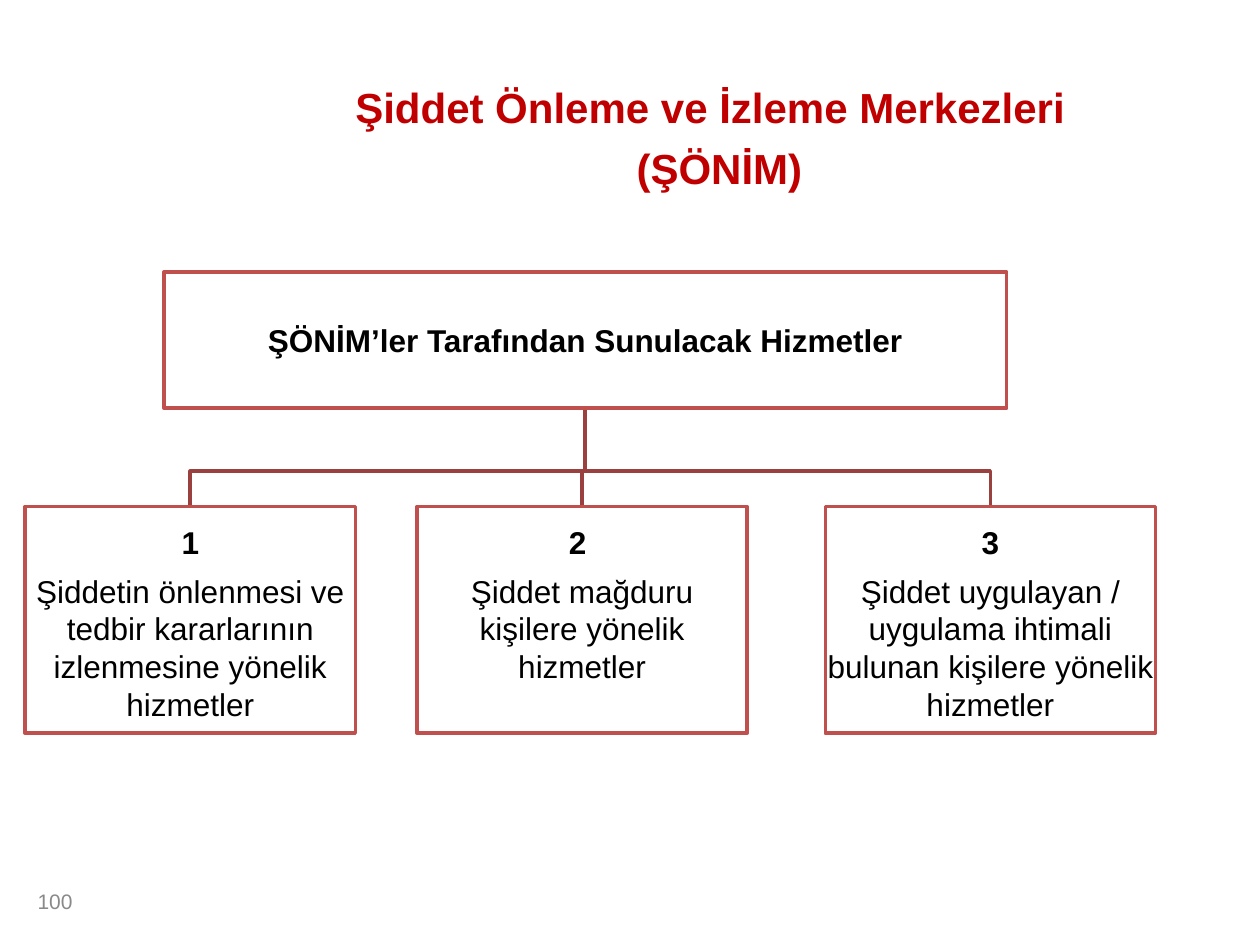
from pptx import Presentation
from pptx.dml.color import RGBColor
from pptx.enum.shapes import MSO_SHAPE
from pptx.enum.text import MSO_ANCHOR, MSO_AUTO_SIZE, PP_ALIGN
from pptx.util import Inches, Pt

BORDER, CONNECTOR = "C0504D", "9A403E"
TITLE_COLOR, TEXT_COLOR, NUMBER_COLOR = "C00000", "000000", "898989"

ROOT_LEFT, ROOT_TOP, ROOT_WIDTH, ROOT_HEIGHT = 1.3, 2.16, 6.69, 1.08
SERVICE_TOP, SERVICE_WIDTH, SERVICE_HEIGHT = 4.02, 2.62, 1.8
BRANCH_Y = 3.74

SERVICES = [
    (0.2, "1", "Şiddetin önlenmesi ve tedbir kararlarının izlenmesine yönelik hizmetler"),
    (3.31, "2 ", "Şiddet mağduru kişilere yönelik hizmetler"),
    (6.55, "3", "Şiddet uygulayan / uygulama ihtimali bulunan kişilere yönelik hizmetler"),
]


def color(hex_value):
    return RGBColor.from_string(hex_value)


def format_paragraph(paragraph, size, hex_value, bold=False, alignment=PP_ALIGN.CENTER):
    paragraph.alignment = alignment
    for run in paragraph.runs:
        run.font.name = "Arial"
        run.font.size = Pt(size)
        run.font.bold = bold
        run.font.color.rgb = color(hex_value)


def set_line(shape, hex_value):
    shape.shadow.inherit = False
    shape.line.color.rgb = color(hex_value)
    shape.line.width = Pt(2)


def add_title(slide):
    title = slide.shapes.title
    title.left, title.top = Inches(2.72), Inches(0.52)
    title.width, title.height = Inches(5.98), Inches(1.03)
    frame = title.text_frame
    frame.text = "Şiddet Önleme ve İzleme Merkezleri\n(ŞÖNİM)"
    frame.auto_size = MSO_AUTO_SIZE.NONE
    frame.vertical_anchor = MSO_ANCHOR.TOP
    for paragraph, alignment in zip(frame.paragraphs, (PP_ALIGN.JUSTIFY, PP_ALIGN.CENTER)):
        format_paragraph(paragraph, 24, TITLE_COLOR, True, alignment)
        paragraph.line_spacing = 1.2


def add_box(slide, left, top, width, height, text):
    """Add a bordered box whose first paragraph is bold."""
    box = slide.shapes.add_shape(
        MSO_SHAPE.RECTANGLE, Inches(left), Inches(top), Inches(width), Inches(height))
    box.fill.solid()
    box.fill.fore_color.rgb = color("FFFFFF")
    set_line(box, BORDER)
    frame = box.text_frame
    frame.text = text
    frame.word_wrap = True
    frame.vertical_anchor = MSO_ANCHOR.MIDDLE
    frame.margin_left = frame.margin_right = Inches(0.01)
    frame.margin_top = frame.margin_bottom = Inches(0.01)
    for index, paragraph in enumerate(frame.paragraphs):
        format_paragraph(paragraph, 18, TEXT_COLOR, bold=index == 0)
    return box


def add_service(slide, left, number, description):
    box = add_box(slide, left, SERVICE_TOP, SERVICE_WIDTH, SERVICE_HEIGHT,
                  f"{number}\n{description}")
    frame = box.text_frame
    frame.vertical_anchor = MSO_ANCHOR.TOP
    frame.margin_top = Inches(0.13)
    frame.paragraphs[0].space_after = Pt(6.3)


def add_branch(slide, service_left):
    """Add the elbow line from the root box to one service box."""
    start_x = ROOT_LEFT + ROOT_WIDTH / 2
    end_x = service_left + SERVICE_WIDTH / 2
    builder = slide.shapes.build_freeform(
        Inches(start_x), Inches(ROOT_TOP + ROOT_HEIGHT))
    corners = [(start_x, BRANCH_Y), (end_x, BRANCH_Y), (end_x, SERVICE_TOP)]
    builder.add_line_segments(
        [(Inches(x), Inches(y)) for x, y in corners], close=False)
    branch = builder.convert_to_shape()
    branch.fill.background()
    set_line(branch, CONNECTOR)


def add_slide_number(slide):
    text_box = slide.shapes.add_textbox(
        Inches(0.2), Inches(6.95), Inches(2.33), Inches(0.4))
    frame = text_box.text_frame
    frame.text = "100"
    frame.word_wrap = True
    frame.vertical_anchor = MSO_ANCHOR.MIDDLE
    format_paragraph(frame.paragraphs[0], 12, NUMBER_COLOR, alignment=PP_ALIGN.LEFT)


def main():
    presentation = Presentation()
    presentation.slide_width, presentation.slide_height = Inches(10), Inches(7.5)
    slide = presentation.slides.add_slide(presentation.slide_layouts.get_by_name("Title Only"))
    add_slide_number(slide)
    add_title(slide)
    for left, _, _ in reversed(SERVICES):
        add_branch(slide, left)
    add_box(slide, ROOT_LEFT, ROOT_TOP, ROOT_WIDTH, ROOT_HEIGHT,
            "ŞÖNİM’ler Tarafından Sunulacak Hizmetler")
    for service in SERVICES:
        add_service(slide, *service)
    presentation.save("out.pptx")


if __name__ == "__main__":
    main()
